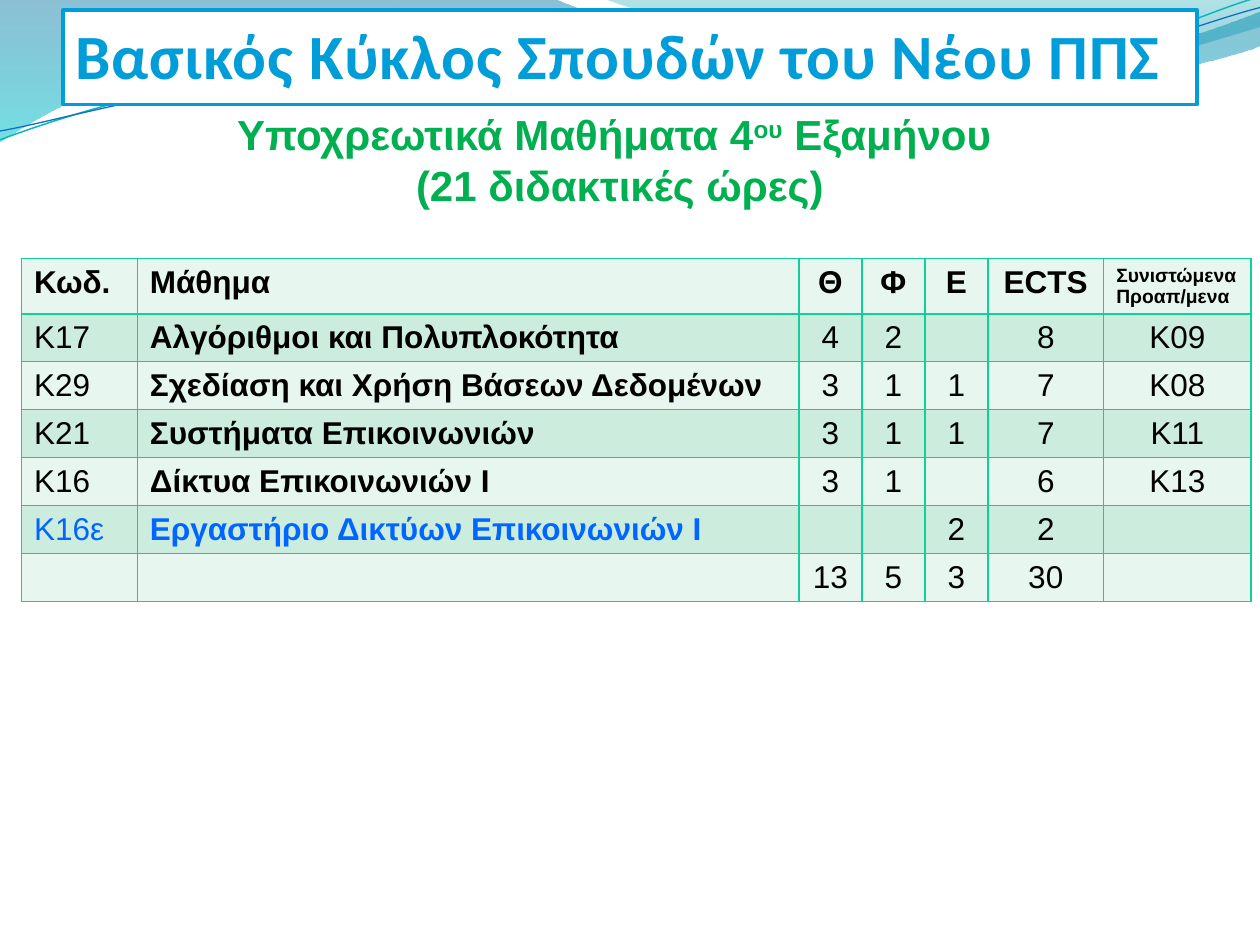
from dataclasses import dataclass

from lxml import etree
from pptx import Presentation
from pptx.dml.color import RGBColor
from pptx.enum.text import MSO_ANCHOR, MSO_AUTO_SIZE, PP_ALIGN
from pptx.oxml.ns import qn
from pptx.util import Inches, Pt

LEFT, CENTER = PP_ALIGN.LEFT, PP_ALIGN.CENTER
TOP, MIDDLE = MSO_ANCHOR.TOP, MSO_ANCHOR.MIDDLE
NO_AUTOFIT = MSO_AUTO_SIZE.NONE
TITLE_ONLY = 5


@dataclass(frozen=True)
class Theme:
    heading_font: str = "Calibri"
    body_font: str = "Arial"
    heading: str = "009DD9"
    subtitle: str = "00B050"
    text: str = "000000"
    lab: str = "0066FF"
    paper: str = "FFFFFF"
    border: str = "10CF9B"
    bands: tuple = ("E7F6EF", "CCEDDE")
    heading_size: int = 36
    subtitle_size: int = 24
    table_size: int = 18
    note_size: int = 11


THEME = Theme()

# Each wave: start point, then lines (2 numbers) and cubic curves (6 numbers)
LEFT_WAVE = [(0, -0.01), (4.4, -0.01), (4.76, 0.17, 6.64, 0.63, 7.58, 0.63),
             (8.53, 0.63, 9.58, 0.26, 10, 0.09), (10.01, 0.36),
             (9.83, 0.44, 8.7, 0.76, 7.46, 0.75),
             (6.22, 0.75, 3.82, 0.28, 2.57, 0.34),
             (1.29, 0.35, 0.46, 0.83, -0.01, 1.13), (0, -0.01)]
RIGHT_WAVE = [(4.79, -0.01), (5.09, 0.11, 6.82, 0.62, 7.69, 0.65),
              (8.56, 0.69, 9.61, 0.32, 10, 0.21), (10, 0), (4.79, -0.01)]
UPPER_STRAND = [(0, 1.11), (0.48, 0.93, 1.58, 0.57, 2.77, 0.52),
                (3.95, 0.47, 5.93, 0.89, 7.13, 0.8),
                (8.33, 0.71, 9.38, 0.15, 9.98, -0.02)]
LOWER_STRAND = [(0, 1.04), (0.47, 0.96, 1.64, 0.61, 2.83, 0.56),
                (4.03, 0.51, 5.97, 0.83, 7.17, 0.75),
                (8.36, 0.67, 9.41, 0.21, 10, 0.06)]

COLUMN_WIDTHS = [0.92, 5.25, 0.5, 0.5, 0.5, 0.92, 1.17]
ROW_HEIGHT = 0.35
COURSES = [
    ["Κωδ.", "Μάθημα", "Θ", "Φ", "Ε", "ECTS", "Συνιστώμενα Προαπ/μενα"],
    ["Κ17", "Αλγόριθμοι και Πολυπλοκότητα", "4", "2", "", "8", "K09"],
    ["Κ29", "Σχεδίαση και Χρήση Βάσεων Δεδομένων", "3", "1", "1", "7", "K08"],
    ["K21", "Συστήματα Επικοινωνιών", "3", "1", "1", "7", "K11"],
    ["Κ16", "Δίκτυα Επικοινωνιών Ι", "3", "1", "", "6", "Κ13"],
    ["Κ16ε", "Εργαστήριο Δικτύων Επικοινωνιών Ι", "", "", "2", "2", ""],
    ["", "", "13", "5", "3", "30", ""],
]
LAB_ROW = 5


def color(value):
    return RGBColor.from_string(value)


def add_run(paragraph, text, size, rgb, bold=True, font=THEME.body_font):
    run = paragraph.add_run()
    run.text = text
    run.font.name = font
    run.font.size = Pt(size)
    run.font.bold = bold
    run.font.color.rgb = color(rgb)
    return run


def add_outline(slide, segments, close):
    """Draw the control points as lines, then join each three into a curve."""
    points = [(Inches(segment[i]), Inches(segment[i + 1]))
              for segment in segments for i in range(0, len(segment), 2)]
    builder = slide.shapes.build_freeform(*points[0], scale=1.0)
    builder.add_line_segments(points[1:], close=close)
    shape = builder.convert_to_shape()
    shape.shadow.inherit = False
    lines = iter(list(shape._element.spPr.iter(qn("a:lnTo"))))
    for segment in segments[1:]:
        curve = next(lines)
        if len(segment) == 6:
            curve.tag = qn("a:cubicBezTo")
            for line in (next(lines), next(lines)):
                curve.append(line[0])
                line.getparent().remove(line)
    return shape


def add_wave(slide, segments, stops):
    """Add a filled wave; stops are (position, colour, opacity in percent)."""
    shape = add_outline(slide, segments, close=True)
    shape.line.fill.background()
    shape.fill.gradient()
    shape.fill.gradient_angle = 270
    for stop, (position, rgb, _) in zip(shape.fill.gradient_stops, stops):
        stop.position = position
        stop.color.rgb = color(rgb)
    tints = shape._element.spPr.iter(qn("a:srgbClr"))
    for tint, (_, _, opacity) in zip(list(tints), stops):
        etree.SubElement(tint, qn("a:alpha"), val=str(opacity * 1000))


def add_strand(slide, segments, rgb, width):
    shape = add_outline(slide, segments, close=False)
    shape.fill.background()
    shape.line.color.rgb = color(rgb)
    shape.line.width = Pt(width)


def add_subtitle(slide):
    box = slide.shapes.add_textbox(Inches(0.17), Inches(0.83), Inches(9.5), Inches(0.87))
    box.text_frame.word_wrap = True
    box.text_frame.vertical_anchor = MIDDLE
    paragraph = box.text_frame.paragraphs[0]
    paragraph.alignment = CENTER
    style = (THEME.subtitle_size, THEME.subtitle)
    add_run(paragraph, "Υποχρεωτικά Μαθήματα 4", *style)
    ordinal = add_run(paragraph, "ου", *style)
    ordinal.font._element.set("baseline", "30000")
    add_run(paragraph, " Εξαμήνου ", *style)
    paragraph.add_line_break()
    add_run(paragraph, "(21 διδακτικές ώρες)", *style)


def format_title(slide):
    title = slide.shapes.title
    title.left, title.top = Inches(0.5), Inches(0.08)
    title.width, title.height = Inches(9), Inches(0.75)
    title.fill.solid()
    title.fill.fore_color.rgb = color(THEME.paper)
    title.line.color.rgb = color(THEME.heading)
    title.line.width = Pt(2)
    frame = title.text_frame
    frame.auto_size = NO_AUTOFIT
    frame.vertical_anchor = TOP
    paragraph = frame.paragraphs[0]
    paragraph.alignment = LEFT
    run = add_run(paragraph, "Βασικός Κύκλος Σπουδών του Νέου ΠΠΣ",
                  THEME.heading_size, THEME.heading, font=THEME.heading_font)
    run.font._element.set("spc", "50")
    # Bring the title in front of the waves
    slide.shapes._spTree.append(title._element)


def add_borders(cell):
    properties = cell._tc.get_or_add_tcPr()
    for side in ("lnL", "lnR", "lnT", "lnB"):
        line = etree.SubElement(properties, qn(f"a:{side}"), w=str(Pt(1)))
        fill = etree.SubElement(line, qn("a:solidFill"))
        etree.SubElement(fill, qn("a:srgbClr"), val=THEME.border)


def fill_cell(cell, text, row, column):
    header = row == 0
    note = header and column == len(COLUMN_WIDTHS) - 1
    add_borders(cell)
    cell.fill.solid()
    cell.fill.fore_color.rgb = color(THEME.bands[row % 2])
    paragraph = cell.text_frame.paragraphs[0]
    paragraph.alignment = LEFT if column < 2 or note else CENTER
    if text:
        add_run(paragraph, text,
                THEME.note_size if note else THEME.table_size,
                THEME.lab if row == LAB_ROW and column < 2 else THEME.text,
                bold=header or column == 1)
    else:
        # Empty cells keep the table font, so rows stay equally high
        ending = etree.SubElement(paragraph._p, qn("a:endParaRPr"),
                                  sz=str(THEME.table_size * 100))
        etree.SubElement(ending, qn("a:latin"), typeface=THEME.body_font)


def add_course_table(slide):
    table = slide.shapes.add_table(
        len(COURSES), len(COLUMN_WIDTHS), Inches(0.17), Inches(2.05),
        Inches(sum(COLUMN_WIDTHS)), Inches(ROW_HEIGHT * len(COURSES))).table
    for column, width in zip(table.columns, COLUMN_WIDTHS):
        column.width = Inches(width)
    for row, values in enumerate(COURSES):
        for column, text in enumerate(values):
            fill_cell(table.cell(row, column), text, row, column)


def main():
    presentation = Presentation()
    presentation.slide_width, presentation.slide_height = Inches(10), Inches(7.5)
    slide = presentation.slides.add_slide(presentation.slide_layouts[TITLE_ONLY])

    # Decorative waves
    add_wave(slide, LEFT_WAVE, [(0, "0074A1", 45), (1, "00C6CF", 55)])
    add_wave(slide, RIGHT_WAVE, [(0, "00A1A9", 30), (0.8, "008BBF", 45)])
    add_strand(slide, UPPER_STRAND, "0AB8BF", 0.85)
    add_strand(slide, LOWER_STRAND, "0F6FC6", 0.75)

    # Headings and course table
    add_subtitle(slide)
    format_title(slide)
    add_course_table(slide)
    presentation.save("out.pptx")


if __name__ == "__main__":
    main()
